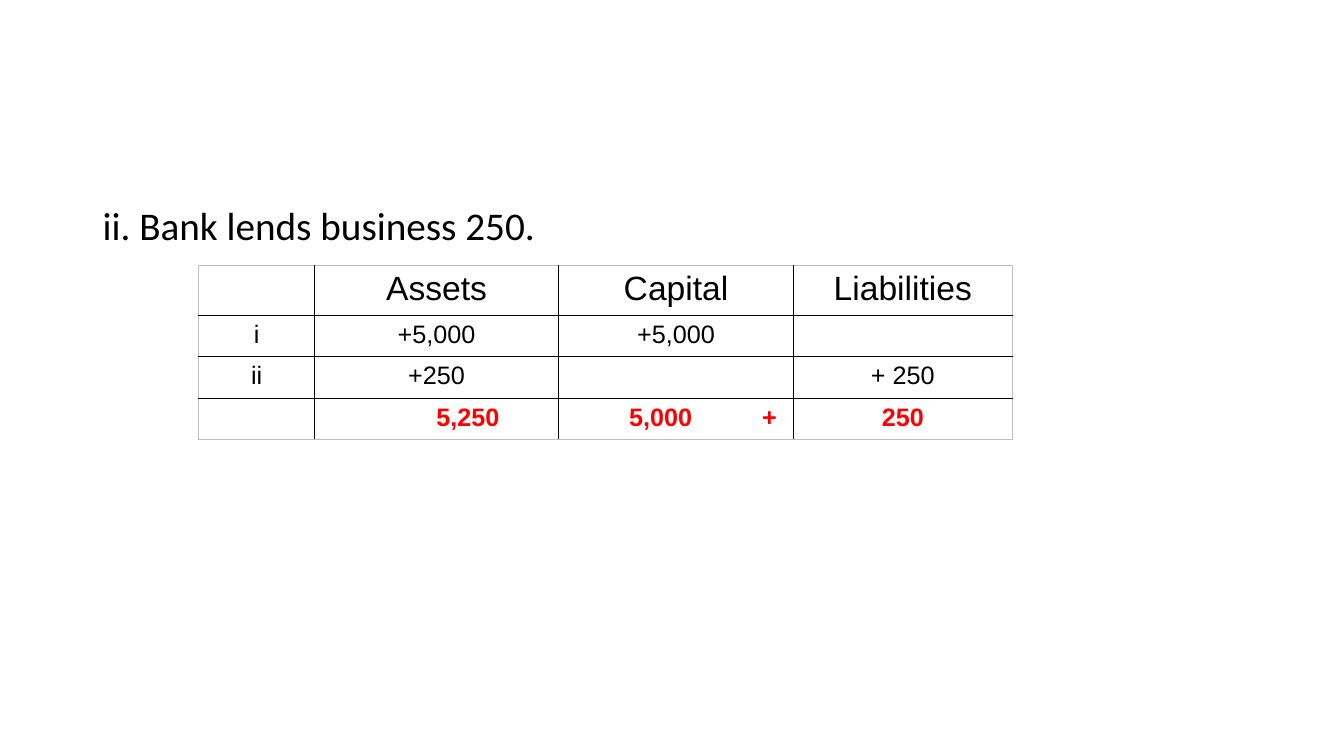
from lxml.etree import SubElement
from pptx import Presentation
from pptx.dml.color import RGBColor
from pptx.enum.text import PP_ALIGN
from pptx.oxml.ns import qn
from pptx.util import Inches, Pt

COLOURS = {"ink": "000000", "total": "FF0000", "frame": "BFBFBF"}
COLUMN_WIDTHS = [1.15, 2.42, 2.33, 2.17]
ROW_HEIGHTS = [0.5, 0.41, 0.41, 0.41]
LEDGER = [
    ["", "Assets", "Capital", "Liabilities"],
    ["i", "+5,000", "+5,000", ""],
    ["ii", "+250", "", "+ 250"],
    ["", "5,250", "5,000\t+", "250"],
]


class Page:
    def __init__(self, deck):
        self.slide = deck.slides.add_slide(deck.slide_layouts[6])

    def add_span(self, paragraph, text, size, font, colour="ink", bold=False):
        span = paragraph.add_run()
        span.text = text
        span.font.size = Pt(size)
        span.font.name = font
        span.font.bold = bold
        span.font.color.rgb = RGBColor.from_string(COLOURS[colour])

    def text(self, left, top, width, height, text, size):
        box = self.slide.shapes.add_textbox(
            Inches(left), Inches(top), Inches(width), Inches(height)
        )
        box.text_frame.word_wrap = True
        paragraph = box.text_frame.paragraphs[0]
        paragraph.line_spacing = 0.9
        self.add_span(paragraph, text, size, "Calibri")

    def border(self, cell, outer_sides):
        properties = cell._tc.get_or_add_tcPr()
        for side in ("lnL", "lnR", "lnT", "lnB"):
            outer = side in outer_sides
            line = SubElement(properties, qn(f"a:{side}"), w=str(Pt(0.5 if outer else 1)))
            fill = SubElement(line, qn("a:solidFill"))
            SubElement(fill, qn("a:srgbClr"), val=COLOURS["frame" if outer else "ink"])

    def table(self, left, top, widths, heights, values):
        table = self.slide.shapes.add_table(
            len(heights), len(widths), Inches(left), Inches(top),
            Inches(sum(widths)), Inches(sum(heights)),
        ).table
        table.first_row = False
        table.horz_banding = False
        for column, width in zip(table.columns, widths):
            column.width = Inches(width)
        for row, height in zip(table.rows, heights):
            row.height = Inches(height)
        last_row, last_column = len(heights) - 1, len(widths) - 1
        for r, row_values in enumerate(values):
            for c, value in enumerate(row_values):
                cell = table.cell(r, c)
                edges = {"lnL": c == 0, "lnR": c == last_column,
                         "lnT": r == 0, "lnB": r == last_row}
                self.border(cell, [side for side, outer in edges.items() if outer])
                cell.fill.background()
                paragraph = cell.text_frame.paragraphs[0]
                paragraph.alignment = PP_ALIGN.CENTER
                if value:
                    total = r == last_row
                    self.add_span(paragraph, value, 24 if r == 0 else 18, "Arial",
                                  "total" if total else "ink", total)
        return table

    def indent(self, cell, margin):
        cell.margin_left = Inches(margin)

    def tab_stop(self, cell, position):
        paragraph = cell.text_frame.paragraphs[0]
        paragraph.alignment = PP_ALIGN.LEFT
        stops = SubElement(paragraph._p.get_or_add_pPr(), qn("a:tabLst"))
        SubElement(stops, qn("a:tab"), pos=str(Inches(position)), algn="l")


def main():
    deck = Presentation()
    deck.slide_width = Inches(13.33)
    deck.slide_height = Inches(7.5)
    page = Page(deck)
    page.text(0.92, 2, 11.5, 4.76, "ii. Bank lends business 250.", 28)
    ledger = page.table(1.97, 2.63, COLUMN_WIDTHS, ROW_HEIGHTS, LEDGER)
    assets_total, capital_total = ledger.cell(3, 1), ledger.cell(3, 2)
    page.indent(assets_total, 0.72)
    page.indent(capital_total, 0.7)
    page.tab_stop(capital_total, 1.32)
    deck.save("out.pptx")


if __name__ == "__main__":
    main()
